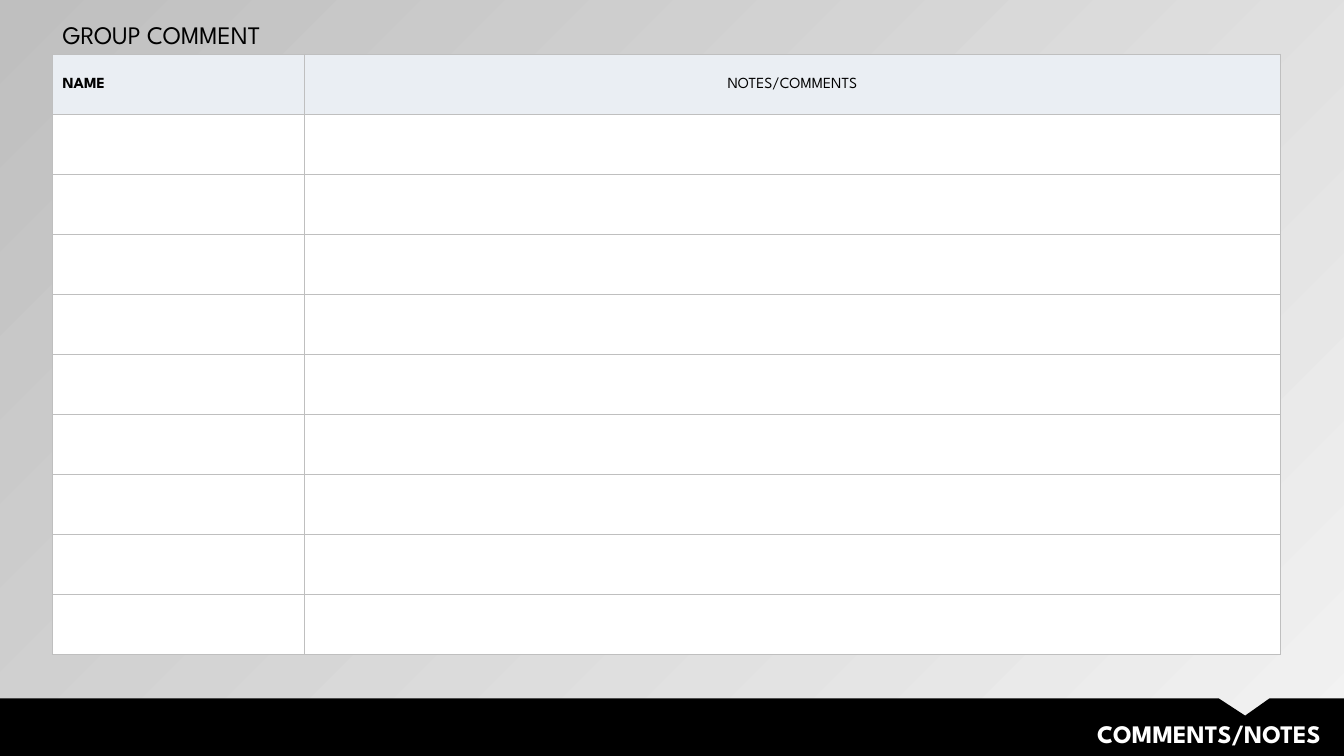
from lxml import etree
from pptx import Presentation
from pptx.dml.color import RGBColor
from pptx.enum.text import MSO_ANCHOR, MSO_AUTO_SIZE, PP_ALIGN
from pptx.oxml.ns import qn
from pptx.util import Inches, Pt

LEFT, CENTER, RIGHT = PP_ALIGN.LEFT, PP_ALIGN.CENTER, PP_ALIGN.RIGHT
MIDDLE, TOP = MSO_ANCHOR.MIDDLE, MSO_ANCHOR.TOP
NO_AUTOFIT = MSO_AUTO_SIZE.NONE

FONT = "League Spartan"
COLORS = {
    "light": "F2F2F2",
    "grey": "BFBFBF",
    "header": "EAEEF3",
    "white": "FFFFFF",
    "black": "000000",
}
TITLE = "GROUP COMMENT"
FOOTER = "COMMENTS/NOTES"
# heading, width, alignment, bold
COLUMNS = [
    ("NAME", 2.5, LEFT, True),
    ("NOTES/COMMENTS", 9.68, CENTER, False),
]
ROW_COUNT = 10
TABLE_LEFT, TABLE_TOP, TABLE_HEIGHT = 0.52, 0.54, 5.96
SLIDE_WIDTH, SLIDE_HEIGHT = 13.33, 7.5
BAND_TOP = 6.93
NOTCH = [(12.09, BAND_TOP), (12.35, 7.1), (12.59, BAND_TOP)]


def color(name):
    return RGBColor.from_string(COLORS[name])


def style(paragraph, size, color_name, bold, alignment):
    paragraph.alignment = alignment
    paragraph.font.name = FONT
    paragraph.font.size = Pt(size)
    paragraph.font.bold = bold
    paragraph.font.color.rgb = color(color_name)


def fill_text_frame(shape, text, color_name, bold, alignment):
    frame = shape.text_frame
    frame.text = text
    frame.word_wrap = True
    frame.auto_size = NO_AUTOFIT
    frame.vertical_anchor = TOP
    style(frame.paragraphs[0], 18, color_name, bold, alignment)


def add_borders(cell):
    properties = cell._tc.get_or_add_tcPr()
    for side in ("a:lnL", "a:lnR", "a:lnT", "a:lnB"):
        line = etree.SubElement(properties, qn(side), w=str(Pt(1)))
        fill = etree.SubElement(line, qn("a:solidFill"))
        etree.SubElement(fill, qn("a:srgbClr"), val=COLORS["grey"])


def set_background(slide):
    fill = slide.background.fill
    fill.gradient()
    fill.gradient_angle = 135
    for stop, name in zip(fill.gradient_stops, ("light", "grey")):
        stop.color.rgb = color(name)


def add_comment_table(slide):
    width = sum(column[1] for column in COLUMNS)
    table = slide.shapes.add_table(
        ROW_COUNT, len(COLUMNS), Inches(TABLE_LEFT), Inches(TABLE_TOP),
        Inches(width), Inches(TABLE_HEIGHT)).table
    for row in table.rows:
        row.height = Inches(TABLE_HEIGHT / ROW_COUNT)
    for index, (heading, width, alignment, bold) in enumerate(COLUMNS):
        table.columns[index].width = Inches(width)
        for row in range(ROW_COUNT):
            cell = table.cell(row, index)
            add_borders(cell)
            cell.fill.solid()
            cell.fill.fore_color.rgb = color("white" if row else "header")
        header = table.cell(0, index)
        header.text = heading
        header.vertical_anchor = MIDDLE
        header.margin_top = header.margin_bottom = 0
        style(header.text_frame.paragraphs[0], 11, "black", bold, alignment)


def add_footer_band(slide):
    outline = NOTCH + [(SLIDE_WIDTH, BAND_TOP), (SLIDE_WIDTH, SLIDE_HEIGHT),
                       (0, SLIDE_HEIGHT)]
    builder = slide.shapes.build_freeform(0, Inches(BAND_TOP))
    builder.add_line_segments([(Inches(x), Inches(y)) for x, y in outline])
    band = builder.convert_to_shape()
    band.shadow.inherit = False
    band.fill.solid()
    band.fill.fore_color.rgb = color("black")
    band.line.fill.background()


def main():
    presentation = Presentation()
    presentation.slide_width = Inches(SLIDE_WIDTH)
    presentation.slide_height = Inches(SLIDE_HEIGHT)
    slide = presentation.slides.add_slide(presentation.slide_layouts[5])

    set_background(slide)
    add_comment_table(slide)
    add_footer_band(slide)

    footer = slide.shapes.add_textbox(
        Inches(4.14), Inches(7.08), Inches(9.06), Inches(0.4))
    fill_text_frame(footer, FOOTER, "white", True, RIGHT)

    title = slide.shapes.title
    title.left, title.top = Inches(TABLE_LEFT), Inches(0.14)
    title.width, title.height = Inches(4.44), Inches(0.4)
    fill_text_frame(title, TITLE, "black", False, LEFT)

    presentation.save("out.pptx")


if __name__ == "__main__":
    main()
